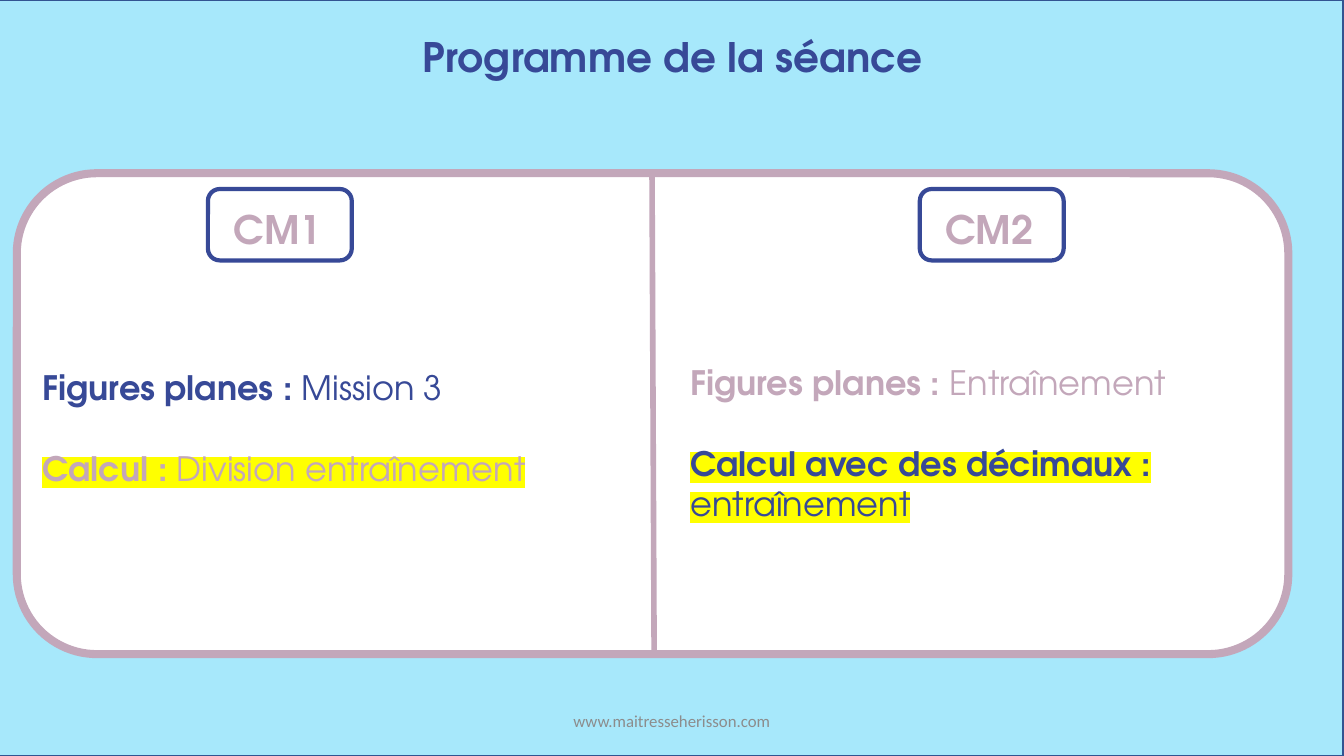
from lxml import etree
from pptx import Presentation
from pptx import util as u
from pptx.dml.color import RGBColor
from pptx.enum import shapes, text
from pptx.oxml.ns import qn

PX = 9525
W, H = 1280, 720
FONT = "TeX Gyre Adventor"
COLORS = {
    "sky": "A7E8FB",
    "edge": "325491",
    "white": "FFFFFF",
    "mauve": "C3A7BA",
    "navy": "374997",
    "grey": "8C8C8C",
    "yellow": "FFFF00",
}


def rgb(name):
    return RGBColor.from_string(COLORS[name])


def emu(*lengths):
    return [u.Emu(n * PX) for n in lengths]


def add_run(p, words, size, color, bold=False, font=FONT, highlight=None):
    r = p.add_run()
    r.text = words
    r.font.name = font
    r.font.size = u.Pt(size)
    r.font.bold = bold
    r.font.color.rgb = rgb(color)
    if highlight:
        mark = etree.Element(qn("a:highlight"))
        etree.SubElement(mark, qn("a:srgbClr"), val=COLORS[highlight])
        r._r.rPr.find(qn("a:solidFill")).addnext(mark)


def add_box(s, kind, box, fill, line, width):
    sp = s.shapes.add_shape(kind, *emu(*box))
    sp.shadow.inherit = False
    sp.fill.solid()
    sp.fill.fore_color.rgb = rgb(fill)
    sp.line.color.rgb = rgb(line)
    sp.line.width = u.Pt(width)
    return sp


def add_text(s, box):
    tf = s.shapes.add_textbox(*emu(*box)).text_frame
    tf.word_wrap = True
    return tf


def add_background(s):
    """Place the sky behind everything, the title included."""
    sp = add_box(s, shapes.MSO_SHAPE.RECTANGLE, (-1, 0, W, H), "sky", "edge", 1)
    s.shapes._spTree.insert(2, sp._element)


def add_title(s, box):
    title = s.shapes.title
    title.left, title.top, title.width, title.height = emu(*box)
    tf = title.text_frame
    tf.word_wrap = True
    tf.auto_size = text.MSO_AUTO_SIZE.NONE
    tf.vertical_anchor = text.MSO_ANCHOR.TOP
    p = tf.paragraphs[0]
    p.alignment = text.PP_ALIGN.CENTER
    add_run(p, "Programme de la séance", 29, "navy", bold=True)


def add_panel(s, box):
    x, y, w, h = box
    add_box(s, shapes.MSO_SHAPE.ROUNDED_RECTANGLE, box, "white", "mauve", 5.75)
    middle = x + w // 2
    divider = s.shapes.add_connector(
        shapes.MSO_CONNECTOR.STRAIGHT, *emu(middle, y, middle + 2, y + h))
    divider.line.color.rgb = rgb("mauve")
    divider.line.width = u.Pt(4)
    etree.SubElement(divider._element.spPr, qn("a:effectLst"))


def add_badge(s, box, level):
    x, y, w, h = box
    add_box(s, shapes.MSO_SHAPE.ROUNDED_RECTANGLE, box, "white", "navy", 3)
    tf = add_text(s, (x + 15, y + 11, w - 31, h - 13))
    add_run(tf.paragraphs[0], level, 28, "mauve", bold=True)


def add_activities(s, box, activities):
    """Write one paragraph per (subject, task, color, highlight)."""
    tf = add_text(s, box)
    for i, (subject, task, color, highlight) in enumerate(activities):
        p = tf.add_paragraph() if i else tf.paragraphs[0]
        if i:
            p.space_before = u.Pt(29)
        add_run(p, subject, 24, color, bold=True, highlight=highlight)
        add_run(p, task, 24, color, highlight=highlight)


def add_footer(s, box):
    tf = add_text(s, box)
    tf.vertical_anchor = text.MSO_ANCHOR.MIDDLE
    p = tf.paragraphs[0]
    p.alignment = text.PP_ALIGN.CENTER
    add_run(p, "www.maitresseherisson.com", 12, "grey", font="Calibri")


def main():
    prs = Presentation()
    prs.slide_width, prs.slide_height = emu(W, H)
    s = prs.slides.add_slide(prs.slide_layouts[5])
    add_background(s)
    add_title(s, (1, 26, W, 57))
    add_panel(s, (16, 165, 1211, 458))
    add_badge(s, (198, 180, 137, 68), "CM1")
    add_badge(s, (876, 180, 137, 68), "CM2")
    add_activities(s, (31, 345, 580, 165), [
        ("Figures planes : ", "Mission 3", "navy", None),
        ("Calcul : ", "Division entraînement", "mauve", "yellow"),
    ])
    add_activities(s, (648, 340, 551, 204), [
        ("Figures planes : ", "Entraînement", "mauve", None),
        ("Calcul avec des décimaux : ", "entraînement", "navy", "yellow"),
    ])
    add_footer(s, (424, 667, 432, 38))
    prs.save("out.pptx")


if __name__ == "__main__":
    main()
